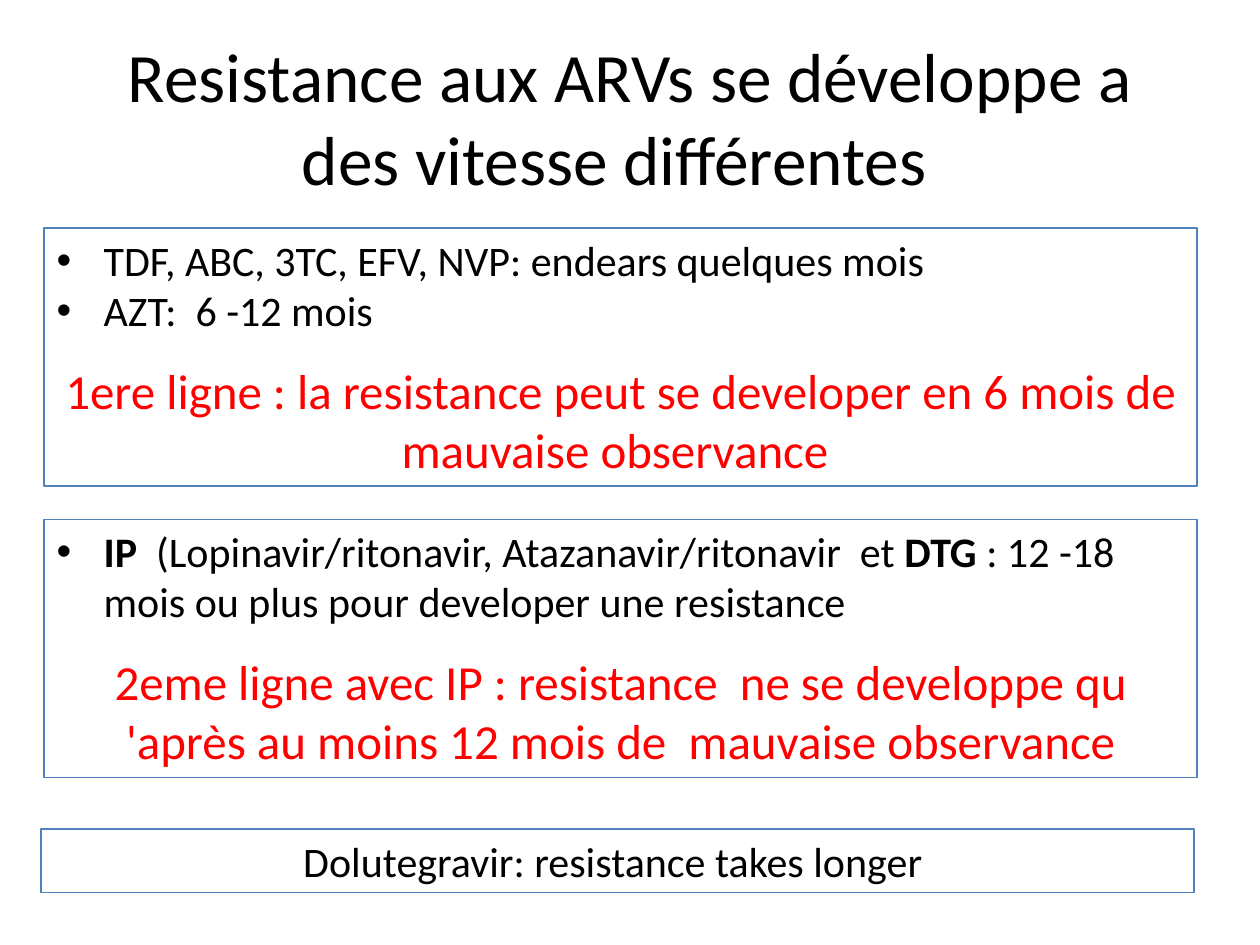
from dataclasses import dataclass

from lxml import etree
from pptx import Presentation
from pptx.dml.color import RGBColor
from pptx.enum.shapes import MSO_SHAPE as Shape
from pptx.enum.text import MSO_ANCHOR as Anchor, MSO_AUTO_SIZE as AutoSize, PP_ALIGN as Align
from pptx.oxml.ns import qn
from pptx.util import Cm, Pt

BLACK = RGBColor(0x00, 0x00, 0x00)
RED = RGBColor(0xFF, 0x00, 0x00)
BLUE = RGBColor(0x4F, 0x81, 0xBD)
FONT = "Calibri"
HANGING = Cm(0.95)


@dataclass
class Para:
    runs: list[tuple[str, bool]]  # text, bold
    size: float = 24
    color: RGBColor = BLACK
    bullet: bool = False
    before: float = 0


@dataclass
class Box:
    left: float
    top: float
    height: float
    paras: list[Para]


def bullet(text: str, *more: tuple[str, bool], bold: bool = False) -> Para:
    return Para([(text, bold), *more], bullet=True)


def conclusion(text: str) -> Para:
    return Para([(text, False)], size=28, color=RED, before=14.6)


def add_bullet(p) -> None:
    pPr = p._p.get_or_add_pPr()
    pPr.set("marL", str(HANGING))
    pPr.set("indent", str(-HANGING))
    etree.SubElement(pPr, qn("a:buFont"), typeface="Arial")
    etree.SubElement(pPr, qn("a:buChar"), char="•")


def write(tf, paras: list[Para], anchor: Anchor) -> None:
    for name, value in {"word_wrap": True, "auto_size": AutoSize.NONE,
                        "vertical_anchor": anchor}.items():
        setattr(tf, name, value)
    for i, para in enumerate(paras):
        p = tf.add_paragraph() if i else tf.paragraphs[0]
        p.alignment = Align.LEFT if para.bullet else Align.CENTER
        p.space_before = Pt(para.before)
        if para.bullet:
            add_bullet(p)
        for text, bold in para.runs:
            r = p.add_run()
            r.text = text
            fmt = {"name": FONT, "size": Pt(para.size), "bold": bold}
            for name, value in fmt.items():
                setattr(r.font, name, value)
            r.font.color.rgb = para.color


def draw_box(s, box: Box) -> None:
    sp = s.shapes.add_shape(Shape.RECTANGLE, Cm(box.left), Cm(box.top),
                            Cm(23.24), Cm(box.height))
    sp.shadow.inherit = False
    sp.fill.background()
    sp.line.color.rgb = BLUE
    sp.line.width = Pt(0.75)
    write(sp.text_frame, box.paras, Anchor.TOP)


TITLE = Para([("Resistance aux ARVs se développe a des vitesse différentes  ", False)],
             size=39.6)
BOXES = [
    # First line
    Box(0.89, 4.6, 5.2, [
        bullet("TDF, ABC, 3TC, EFV, NVP: endears quelques mois"),
        bullet("AZT:  6 -12 mois"),
        conclusion("1ere ligne : la resistance peut se developer en 6 mois "
                   "de mauvaise observance "),
    ]),
    # Second line
    Box(0.89, 10.47, 5.2, [
        bullet("IP  ", ("(Lopinavir/ritonavir, Atazanavir/ritonavir  et ", False),
               ("DTG ", True),
               (": 12 -18 mois ou plus pour developer une resistance", False), bold=True),
        conclusion("2eme ligne avec IP : resistance  ne se developpe qu "
                   "'après au moins 12 mois de  mauvaise observance"),
    ]),
    # Dolutegravir
    Box(0.83, 16.71, 1.28, [Para([("Dolutegravir: resistance takes longer ", False)])]),
]


def main() -> None:
    prs = Presentation()
    prs.slide_width, prs.slide_height = Cm(25.4), Cm(19.05)
    s = prs.slides.add_slide(prs.slide_layouts[6])

    # Title
    title = s.shapes.add_textbox(Cm(1.27), Cm(0.76), Cm(22.86), Cm(3.18))
    write(title.text_frame, [TITLE], Anchor.MIDDLE)

    # Framed texts
    for box in BOXES:
        draw_box(s, box)

    prs.save("out.pptx")


if __name__ == "__main__":
    main()
